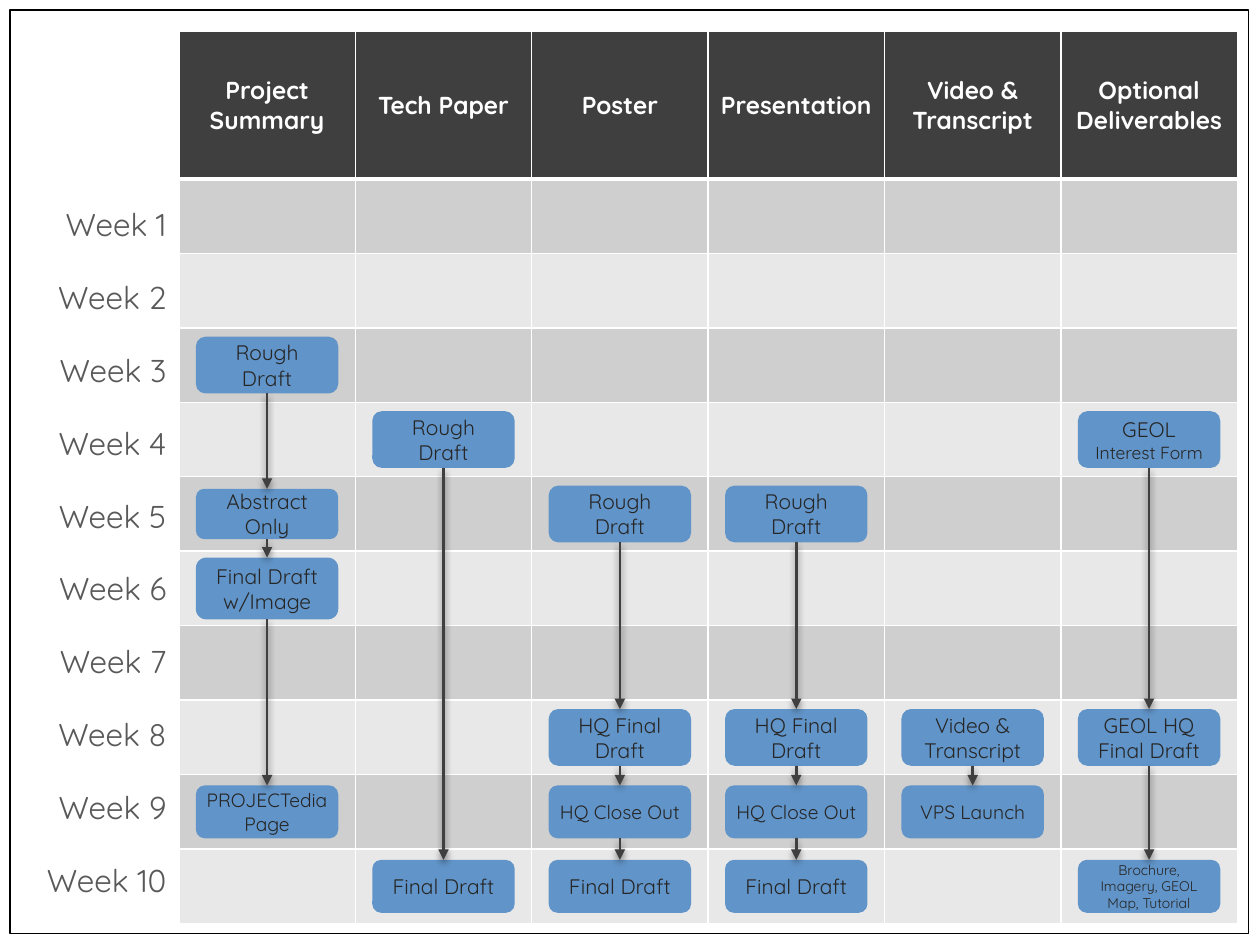
from dataclasses import dataclass

from lxml import etree
from pptx import Presentation
from pptx import util as u
from pptx.dml.color import RGBColor
from pptx.enum import shapes, text
from pptx.oxml import ns


@dataclass(frozen=True)
class Theme:
    font: str = "Quicksand"
    white: str = "FFFFFF"
    black: str = "000000"
    dark: str = "3F3F3F"
    bands: tuple = ("CFCFCF", "E8E8E8")
    box: str = "6194C8"
    box_text: str = "262626"
    week_text: str = "595959"
    week_size: int = 18
    header_size: int = 14
    box_size: int = 12
    page_size: int = 11
    small_size: int = 10
    tiny_size: int = 8


THEME = Theme()
LEFT, TOP = 1.42, 0.25
COL_W, HEADER_H = 1.4, 1.17
WEEKS = 10
ROW_H = (7.08 - HEADER_H) / WEEKS
BOX_W = 1.13

ROUGH = (0.45, [("Rough Draft", THEME.box_size)])
HQ_FINAL = (0.45, [("HQ Final Draft", THEME.box_size)])
CLOSE_OUT = (0.42, [("HQ Close Out", THEME.page_size)])
FINAL = (0.42, [("Final Draft", THEME.box_size)])
REVIEWED = {5: ROUGH, 8: HQ_FINAL, 9: CLOSE_OUT, 10: FINAL}

DELIVERABLES = {
    "Project Summary": {
        3: ROUGH,
        5: (0.4, [("Abstract Only", THEME.box_size)]),
        6: (0.49, [("Final Draft w/Image", THEME.box_size)]),
        9: (0.42, [("PROJECTedia Page", THEME.page_size)]),
    },
    "Tech Paper": {4: ROUGH, 10: FINAL},
    "Poster": REVIEWED,
    "Presentation": REVIEWED,
    "Video & Transcript": {
        8: (0.45, [("Video & Transcript", THEME.box_size)]),
        9: (0.42, [("VPS Launch", THEME.page_size)]),
    },
    "Optional Deliverables": {
        4: (0.45, [("GEOL ", THEME.box_size),
                   ("Interest Form", THEME.small_size)]),
        8: (0.45, [("GEOL HQ Final Draft", THEME.box_size)]),
        10: (0.42, [("Brochure, Imagery, GEOL Map, Tutorial", THEME.tiny_size)]),
    },
}


def rgb(color):
    return RGBColor.from_string(color)


def format_run(r, size, color, bold=False):
    r.font.name = THEME.font
    r.font.size = u.Pt(size)
    r.font.color.rgb = rgb(color)
    r.font.bold = bold


def add_frame(s):
    sp = s.shapes.add_shape(shapes.MSO_SHAPE.RECTANGLE, u.Inches(0.08),
                            u.Inches(0.08), u.Inches(9.83), u.Inches(7.33))
    sp.shadow.inherit = False
    sp.fill.solid()
    sp.fill.fore_color.rgb = rgb(THEME.white)
    sp.line.color.rgb = rgb(THEME.black)
    sp.line.width = u.Pt(0.75)


def set_borders(cell, top, bottom):
    tc_pr = cell._tc.get_or_add_tcPr()
    widths = {"lnL": 1, "lnR": 1, "lnT": top, "lnB": bottom}
    for i, (tag, width) in enumerate(widths.items()):
        ln = etree.Element(ns.qn(f"a:{tag}"), w=str(u.Pt(width)))
        fill = etree.SubElement(ln, ns.qn("a:solidFill"))
        etree.SubElement(fill, ns.qn("a:srgbClr"), val=THEME.white)
        tc_pr.insert(i, ln)


def add_grid(s):
    cols = len(DELIVERABLES)
    table = s.shapes.add_table(
        WEEKS + 1, cols, u.Inches(LEFT), u.Inches(TOP), u.Inches(COL_W * cols),
        u.Inches(HEADER_H + WEEKS * ROW_H)).table
    table.horz_banding = False
    for col in table.columns:
        col.width = u.Inches(COL_W)
    for i, row in enumerate(table.rows):
        row.height = u.Inches(ROW_H if i else HEADER_H)
        for cell in row.cells:
            cell.fill.solid()
            color = THEME.bands[(i - 1) % 2] if i else THEME.dark
            cell.fill.fore_color.rgb = rgb(color)
            set_borders(cell, 3 if i == 1 else 1, 1 if i else 3)
    for cell, title in zip(table.rows[0].cells, DELIVERABLES):
        cell.vertical_anchor = text.MSO_ANCHOR.MIDDLE
        p = cell.text_frame.paragraphs[0]
        p.text = title
        p.alignment = text.PP_ALIGN.CENTER
        format_run(p.runs[0], THEME.header_size, THEME.white, True)


def add_weeks(s):
    tf = s.shapes.add_textbox(u.Inches(0.17), u.Inches(1.58), u.Inches(1.25),
                              u.Inches(5.65)).text_frame
    tf.word_wrap = False
    tf.auto_size = text.MSO_AUTO_SIZE.SHAPE_TO_FIT_TEXT
    tf.text = "\n".join(f"Week {week}" for week in range(1, WEEKS + 1))
    for p in tf.paragraphs:
        p.alignment = text.PP_ALIGN.RIGHT
        p.space_after = u.Pt(20)
        format_run(p.runs[0], THEME.week_size, THEME.week_text)


def add_box(s, col, week, height, parts):
    x = LEFT + (col + 0.5) * COL_W - BOX_W / 2
    y = TOP + HEADER_H + (week - 0.5) * ROW_H - height / 2
    sp = s.shapes.add_shape(shapes.MSO_SHAPE.ROUNDED_RECTANGLE, u.Inches(x),
                            u.Inches(y), u.Inches(BOX_W), u.Inches(height))
    sp.shadow.inherit = False
    sp.fill.solid()
    sp.fill.fore_color.rgb = rgb(THEME.box)
    sp.line.fill.background()
    tf = sp.text_frame
    tf.word_wrap = True
    tf.vertical_anchor = text.MSO_ANCHOR.MIDDLE
    if parts[0][1] == THEME.page_size:
        tf.margin_left = tf.margin_right = 0
    p = tf.paragraphs[0]
    p.alignment = text.PP_ALIGN.CENTER
    for words, size in parts:
        r = p.add_run()
        r.text = words
        format_run(r, size, THEME.box_text)
    return sp


def add_arrow(s, start, end):
    line = s.shapes.add_connector(shapes.MSO_CONNECTOR.STRAIGHT, 0, 0, 0, 0)
    line.begin_connect(start, 2)
    line.end_connect(end, 0)
    line.line.color.rgb = rgb(THEME.dark)
    line.line.width = u.Pt(1.57)
    etree.SubElement(line.line._get_or_add_ln(), ns.qn("a:tailEnd"),
                     type="triangle")
    effects = etree.SubElement(line._element.spPr, ns.qn("a:effectLst"))
    shadow = etree.SubElement(effects, ns.qn("a:outerShdw"),
                              blurRad=str(u.Pt(4)), dist=str(u.Pt(2)),
                              dir="5400000", rotWithShape="0")
    color = etree.SubElement(shadow, ns.qn("a:srgbClr"), val=THEME.black)
    etree.SubElement(color, ns.qn("a:alpha"), val="45000")


def add_track(s, col, steps):
    boxes = [add_box(s, col, week, *step) for week, step in steps.items()]
    for start, end in zip(boxes, boxes[1:]):
        add_arrow(s, start, end)


def main():
    prs = Presentation()
    prs.slide_width, prs.slide_height = u.Inches(10), u.Inches(7.5)
    s = prs.slides.add_slide(prs.slide_layouts[6])
    add_frame(s)
    add_grid(s)
    add_weeks(s)
    for col, steps in enumerate(DELIVERABLES.values()):
        add_track(s, col, steps)
    prs.save("out.pptx")


if __name__ == "__main__":
    main()
